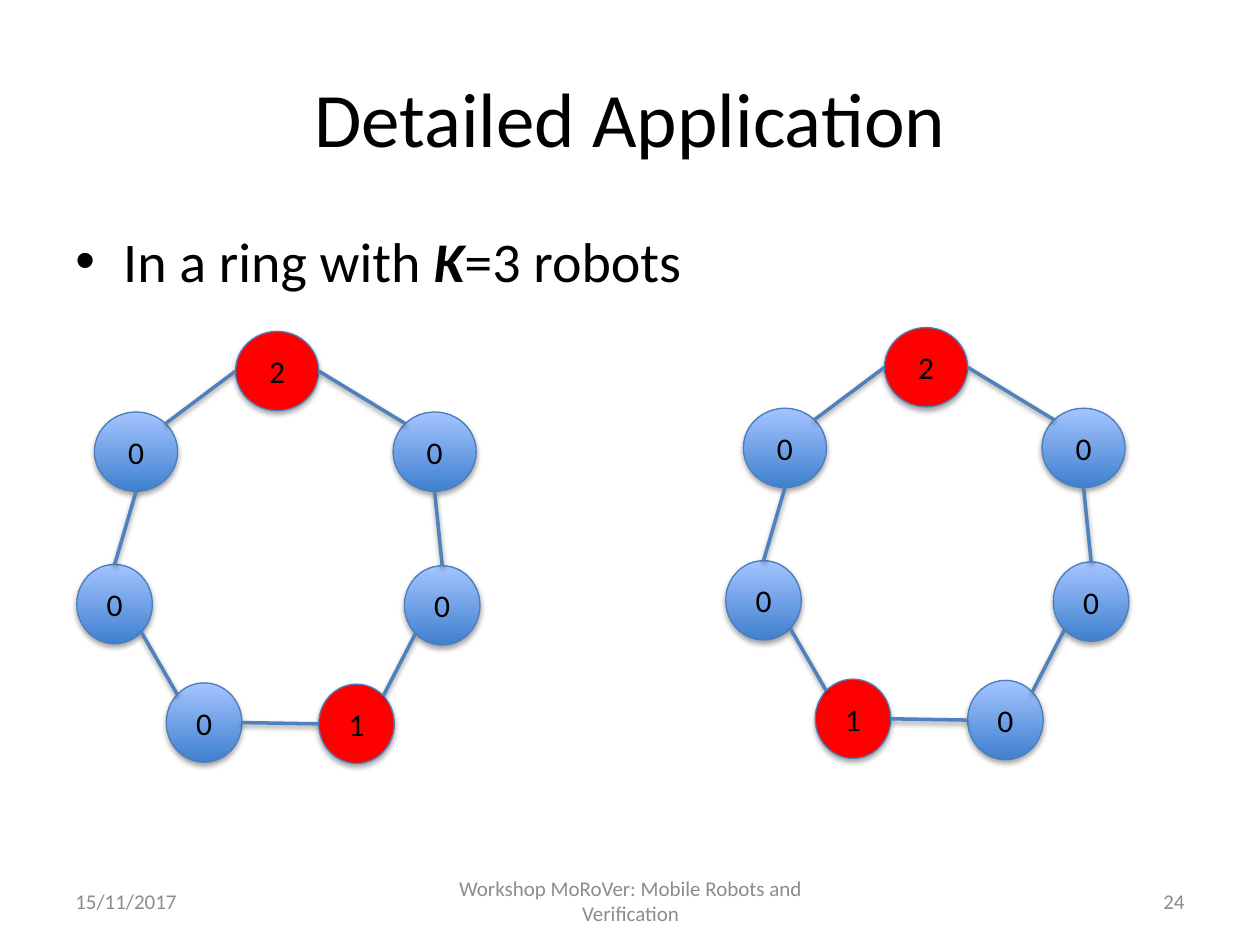
import math

from lxml import etree
from pptx import Presentation
from pptx import util as u
from pptx.dml.color import RGBColor
from pptx.enum import shapes, text
from pptx.oxml.ns import qn

COLORS = {
    "text": "000000",
    "footer": "8C8C8C",
    "robot": "FF0000",
    "node_dark": "3F80CE",
    "node_light": "A4C4FF",
    "outline": "4B7EBC",
    "edge": "4F81BD",
    "shadow": "000000",
}
FONT = "Calibri"

# Ring nodes, clockwise from the top: left, top, width relative to the ring box
NODES = [(1.26, 0, 0.66), (2.51, 0.64, 0.66), (2.6, 1.86, 0.6), (1.92, 2.8, 0.6),
         (0.71, 2.79, 0.6), (0, 1.85, 0.6), (0.14, 0.64, 0.66)]
NODE_HEIGHT = 0.63
# Angles, clockwise from the right, at which each edge leaves a node and meets the next
EDGE_ANGLES = [(0, 225), (90, 270), (135, 315), (180, 0),
               (225, 45), (270, 90), (315, 180)]


def rgb(name):
    return RGBColor.from_string(COLORS[name])


def style_runs(paragraph, size, color="text"):
    for run in paragraph.runs:
        run.font.name = FONT
        run.font.size = u.Pt(size)
        run.font.color.rgb = rgb(color)


def add_shadow(part, distance, opacity):
    effects = etree.SubElement(part._element.spPr, qn("a:effectLst"))
    shadow = etree.SubElement(effects, qn("a:outerShdw"), blurRad=str(u.Pt(3.1)),
                              dist=str(u.Pt(distance)), dir="5400000", rotWithShape="0")
    color = etree.SubElement(shadow, qn("a:srgbClr"), val=COLORS["shadow"])
    etree.SubElement(color, qn("a:alpha"), val=str(opacity * 1000))


def add_text(slide, box, words, size, color="text", align=text.PP_ALIGN.LEFT,
             anchor=text.MSO_ANCHOR.MIDDLE):
    frame = slide.shapes.add_textbox(*map(u.Inches, box)).text_frame
    frame.word_wrap = True
    frame.vertical_anchor = anchor
    paragraph = frame.paragraphs[0]
    paragraph.text = words
    paragraph.alignment = align
    style_runs(paragraph, size, color)
    return paragraph


def add_statement(slide, box):
    statement = add_text(slide, box, "In a ring with ", 32, anchor=text.MSO_ANCHOR.TOP)
    robot_count = statement.add_run()
    robot_count.text = "K"
    robot_count.font.bold = robot_count.font.italic = True
    statement.add_run().text = "=3 robots"
    style_runs(statement, 32)

    # Bullet with hanging indent
    props = statement._p.get_or_add_pPr()
    props.set("marL", str(u.Inches(0.38)))
    props.set("indent", str(-u.Inches(0.38)))
    before = etree.SubElement(props, qn("a:spcBef"))
    etree.SubElement(before, qn("a:spcPct"), val="20000")
    etree.SubElement(props, qn("a:buFont"), typeface="Arial")
    etree.SubElement(props, qn("a:buChar"), char="•")


def add_node(slide, box, label):
    node = slide.shapes.add_shape(shapes.MSO_SHAPE.OVAL, *map(u.Inches, box))
    if label == "0":
        node.fill.gradient()
        node.fill.gradient_angle = 90
        for stop, color in zip(node.fill.gradient_stops, ("node_dark", "node_light")):
            stop.color.rgb = rgb(color)
    else:
        node.fill.solid()
        node.fill.fore_color.rgb = rgb("robot")
    node.line.color.rgb = rgb("outline")
    node.line.width = u.Pt(0.75)
    add_shadow(node, 1.8, 35)

    frame = node.text_frame
    frame.text = label
    frame.vertical_anchor = text.MSO_ANCHOR.MIDDLE
    frame.paragraphs[0].alignment = text.PP_ALIGN.CENTER
    style_runs(frame.paragraphs[0], 18)


def rim_point(box, degrees):
    left, top, width, height = box
    angle = math.radians(degrees)
    return (u.Inches(left + width / 2 * (1 + math.cos(angle))),
            u.Inches(top + height / 2 * (1 + math.sin(angle))))


def add_ring(slide, left, top, labels):
    boxes = [(left + x, top + y, width, NODE_HEIGHT) for x, y, width in NODES]
    for box, label in zip(boxes, labels):
        add_node(slide, box, label)

    # Edges close the ring from each node to the next
    for box, next_box, (leave, meet) in zip(boxes, boxes[1:] + boxes[:1], EDGE_ANGLES):
        edge = slide.shapes.add_connector(shapes.MSO_CONNECTOR.STRAIGHT,
                                          *rim_point(box, leave),
                                          *rim_point(next_box, meet))
        edge.line.color.rgb = rgb("edge")
        edge.line.width = u.Pt(2)
        add_shadow(edge, 1.6, 38)


def add_footer(slide, top, height):
    entries = [
        (0.5, 2.33, "15/11/2017", text.PP_ALIGN.LEFT),
        (3.42, 3.17, "Workshop MoRoVer: Mobile Robots and Verification",
         text.PP_ALIGN.CENTER),
        (7.17, 2.33, "24", text.PP_ALIGN.RIGHT),
    ]
    for left, width, words, align in entries:
        add_text(slide, (left, top, width, height), words, 12, "footer", align)


def main():
    deck = Presentation()
    deck.slide_width, deck.slide_height = u.Inches(10), u.Inches(7.5)
    slide = deck.slides.add_slide(deck.slide_layouts[6])

    add_text(slide, (0.5, 0.3, 9, 1.25), "Detailed Application", 44,
             align=text.PP_ALIGN.CENTER)
    add_statement(slide, (0.5, 1.75, 9, 4.95))
    add_footer(slide, 6.95, 0.4)

    # The two rings differ in where the single robot stands
    add_ring(slide, 0.61, 2.63, "2001000")
    add_ring(slide, 5.76, 2.6, "2000100")

    deck.save("out.pptx")


if __name__ == "__main__":
    main()
